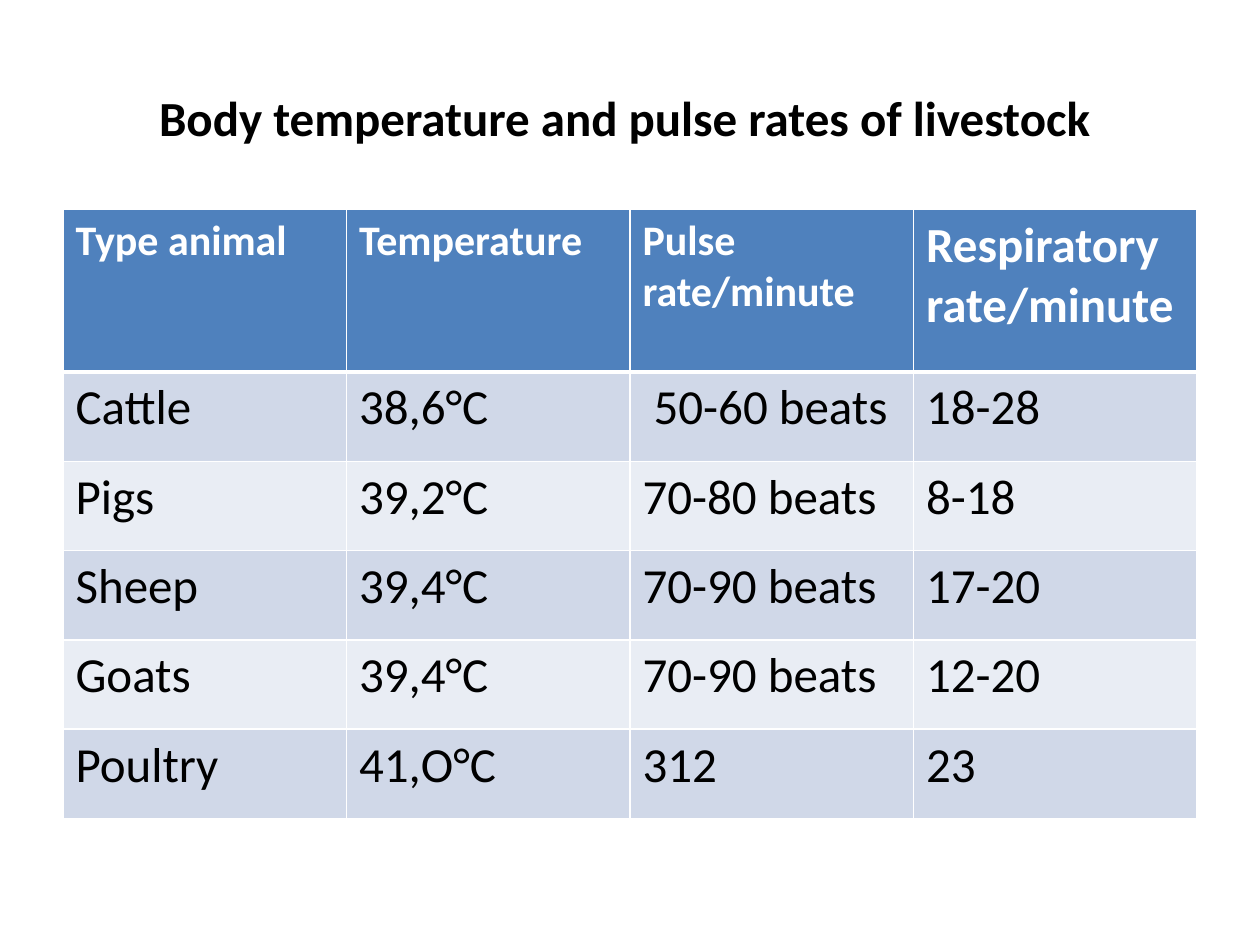
from lxml.etree import SubElement
from pptx import Presentation
from pptx.dml.color import RGBColor
from pptx.enum.text import MSO_ANCHOR, PP_ALIGN
from pptx.oxml.ns import qn
from pptx.util import Cm, Pt

BLACK = RGBColor(0x00, 0x00, 0x00)
WHITE = RGBColor(0xFF, 0xFF, 0xFF)
BLUE = RGBColor(0x4F, 0x81, 0xBD)
BAND_DARK = RGBColor(0xD0, 0xD8, 0xE8)
BAND_LIGHT = RGBColor(0xE9, 0xED, 0xF4)

ROWS = [
    ["Type animal", "Temperature", "Pulse rate/minute", "Respiratory rate/minute"],
    ["Cattle", "38,6°C", " 50-60 beats", "18-28"],
    ["Pigs", "39,2°C", "70-80 beats", "8-18"],
    ["Sheep", "39,4°C", "70-90 beats", "17-20"],
    ["Goats", "39,4°C", "70-90 beats", "12-20"],
    ["Poultry", "41,O°C", "312", "23"],
]


def format_run(r, size, color, bold):
    r.font.name = "Calibri"
    r.font.size = Pt(size)
    r.font.bold = bold
    r.font.color.rgb = color


def add_borders(cell, widths):
    """Draw white borders; widths are points for left, right, top, bottom."""
    tc_pr = cell._tc.get_or_add_tcPr()
    for side, width in zip("LRTB", widths):
        ln = SubElement(tc_pr, qn(f"a:ln{side}"), w=str(Pt(width)))
        fill = SubElement(ln, qn("a:solidFill"))
        SubElement(fill, qn("a:srgbClr"), val=str(WHITE))


prs = Presentation()
prs.slide_width, prs.slide_height = Cm(25.4), Cm(19.05)
s = prs.slides.add_slide(prs.slide_layouts[6])

# Title
title = s.shapes.add_textbox(Cm(1.27), Cm(0.76), Cm(22.86), Cm(3.18))
tf = title.text_frame
tf.word_wrap = True
tf.vertical_anchor = MSO_ANCHOR.MIDDLE
p = tf.paragraphs[0]
p.text = "Body temperature and pulse rates of livestock "
p.alignment = PP_ALIGN.CENTER
format_run(p.runs[0], 28, BLACK, True)

# Table
table = s.shapes.add_table(
    len(ROWS), len(ROWS[0]), Cm(1.27), Cm(4.22), Cm(22.86), Cm(12.28)
).table
for i, row in enumerate(ROWS):
    header = i == 0
    table.rows[i].height = Cm(3.28) if header else Cm(1.8)
    for j, text in enumerate(row):
        cell = table.cell(i, j)
        add_borders(cell, (1, 1, 3 if i == 1 else 1, 3 if header else 1))
        cell.fill.solid()
        cell.fill.fore_color.rgb = BLUE if header else (BAND_LIGHT, BAND_DARK)[i % 2]
        cell.text_frame.text = text
        size = 24 if header and j < 3 else 28
        format_run(cell.text_frame.paragraphs[0].runs[0], size,
                   WHITE if header else BLACK, header)

prs.save("out.pptx")
